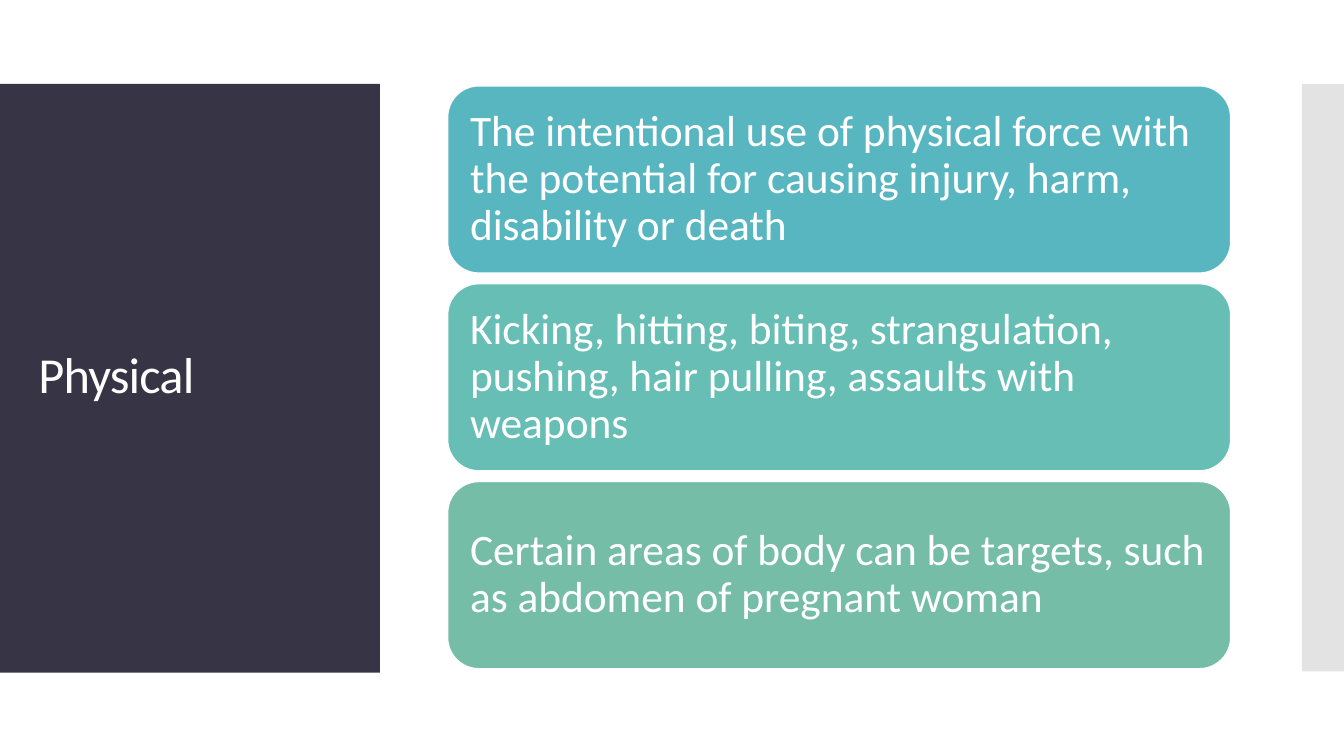
from dataclasses import dataclass

from lxml import etree
from pptx import Presentation
from pptx.dml.color import RGBColor
from pptx.enum import shapes, text
from pptx.oxml import ns
from pptx.util import Pt

HEADING = "Physical"
POINTS = [
    ("The intentional use of physical force with the potential for causing "
     "injury, harm, disability or death", "58B6C0"),
    ("Kicking, hitting, biting, strangulation, pushing, hair pulling, "
     "assaults with weapons", "67BEB5"),
    ("Certain areas of body can be targets, such as abdomen of pregnant woman",
     "75BDA7"),
]


@dataclass(frozen=True)
class Theme:
    font: str = "Calibri"
    heading_size: float = 36
    point_size: float = 31
    light: str = "FFFFFF"
    panel: str = "373545"
    edge: str = "C8C8C8"


THEME = Theme()
CARD_LEFT, CARD_TOP, CARD_WIDTH, CARD_HEIGHT = 319.8, 61.4, 559.2, 133.6
CARD_STEP = 141.3
CARD_INSET = 9.4


def add_block(slide, kind, left, top, width, height, color):
    block = slide.shapes.add_shape(kind, Pt(left), Pt(top), Pt(width), Pt(height))
    block.shadow.inherit = False
    block.fill.solid()
    block.fill.fore_color.rgb = RGBColor.from_string(color)
    block.line.fill.background()
    return block


def write(frame, words, size):
    frame.word_wrap = True
    frame.auto_size = text.MSO_AUTO_SIZE.NONE
    frame.vertical_anchor = text.MSO_ANCHOR.MIDDLE
    paragraph = frame.paragraphs[0]
    paragraph.alignment = text.PP_ALIGN.LEFT
    paragraph.line_spacing = 0.9
    run = paragraph.add_run()
    run.text = words
    run.font.name = THEME.font
    run.font.size = Pt(size)
    run.font.color.rgb = RGBColor.from_string(THEME.light)
    return run


def add_card(slide, index, words, color):
    card = add_block(slide, shapes.MSO_SHAPE.ROUNDED_RECTANGLE, CARD_LEFT,
                     CARD_TOP + index * CARD_STEP, CARD_WIDTH, CARD_HEIGHT, color)
    card.line.color.rgb = RGBColor.from_string(THEME.light)
    card.line.width = Pt(0.85)
    frame = card.text_frame
    frame.margin_left = frame.margin_right = Pt(CARD_INSET)
    frame.margin_top = frame.margin_bottom = Pt(CARD_INSET)
    write(frame, words, THEME.point_size)


def main():
    deck = Presentation()
    deck.slide_width, deck.slide_height = Pt(960), Pt(540)
    slide = deck.slides.add_slide(deck.slide_layouts[5])
    heading = slide.shapes.title

    edge = add_block(slide, shapes.MSO_SHAPE.RECTANGLE, 930, 60, 30, 419.5, THEME.edge)
    tint = edge._element.spPr.find(ns.qn("a:solidFill"))[0]
    etree.SubElement(tint, ns.qn("a:alpha")).set("val", "50000")
    panel = add_block(slide, shapes.MSO_SHAPE.RECTANGLE, 0, 60, 271.4, 420.5, THEME.panel)

    panel._element.addnext(heading._element)
    heading.left, heading.top = Pt(20.2), Pt(88.6)
    heading.width, heading.height = Pt(231.8), Pt(362.2)
    run = write(heading.text_frame, HEADING, THEME.heading_size)
    run.font._element.set("spc", "-60")

    for index, (words, color) in enumerate(POINTS):
        add_card(slide, index, words, color)

    deck.save("out.pptx")


if __name__ == "__main__":
    main()
